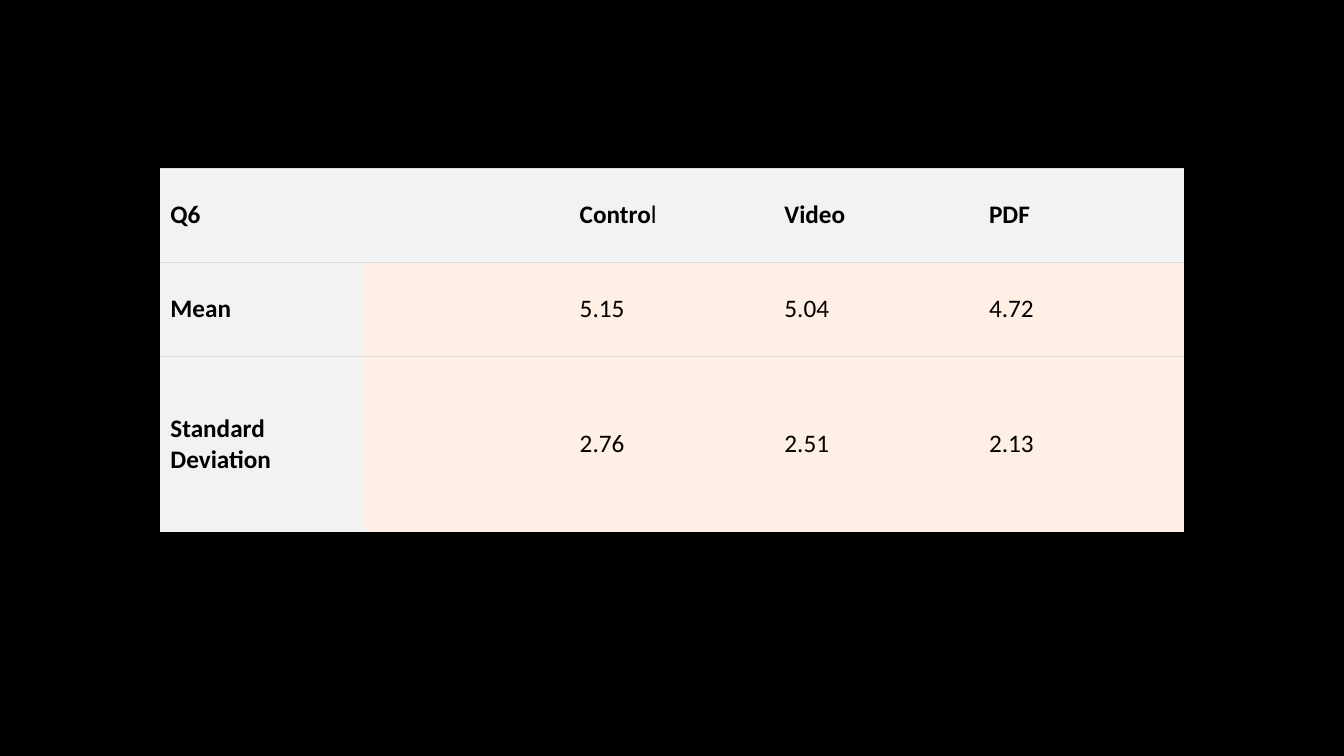
from lxml.etree import SubElement
from pptx import Presentation
from pptx.dml.color import RGBColor
from pptx.enum.text import MSO_ANCHOR
from pptx.oxml.ns import qn
from pptx.util import Inches, Pt

BLACK = RGBColor(0x00, 0x00, 0x00)
GREY = RGBColor(0xF2, 0xF2, 0xF2)
PEACH = RGBColor(0xFF, 0xEF, 0xE5)
RULE = RGBColor(0xDD, 0xDD, 0xDD)
NO_STYLE_NO_GRID = "{2D5ABB26-0587-4C30-8999-92F81FD0307C}"

ROWS = [
    ["Q6", "", "Control", "Video", "PDF"],
    ["Mean", "", "5.15", "5.04", "4.72"],
    ["Standard Deviation", "", "2.76", "2.51", "2.13"],
]
ROW_HEIGHTS = [0.93, 0.93, 1.75]
COL_WIDTH = 2.03


def add_border(cell, tag):
    ln = SubElement(cell._tc.get_or_add_tcPr(), qn(tag), w=str(Pt(0.43)))
    fill = SubElement(ln, qn("a:solidFill"))
    SubElement(fill, qn("a:srgbClr"), val=str(RULE))


prs = Presentation()
prs.slide_width, prs.slide_height = Inches(13.33), Inches(7.5)
s = prs.slides.add_slide(prs.slide_layouts[6])
s.background.fill.solid()
s.background.fill.fore_color.rgb = BLACK

n_rows, n_cols = len(ROWS), len(ROWS[0])
width = Inches(COL_WIDTH * n_cols)
left = (prs.slide_width - width) // 2
table = s.shapes.add_table(n_rows, n_cols, left, Inches(1.67),
                           width, Inches(sum(ROW_HEIGHTS))).table
table._tbl.tblPr.find(qn("a:tableStyleId")).text = NO_STYLE_NO_GRID
for col in table.columns:
    col.width = Inches(COL_WIDTH)

for i, (texts, height) in enumerate(zip(ROWS, ROW_HEIGHTS)):
    table.rows[i].height = Inches(height)
    for j, text in enumerate(texts):
        cell = table.cell(i, j)
        is_header = i == 0 or j == 0
        add_border(cell, "a:lnT")
        if i < n_rows - 1:
            add_border(cell, "a:lnB")
        cell.fill.solid()
        cell.fill.fore_color.rgb = GREY if is_header else PEACH
        cell.vertical_anchor = MSO_ANCHOR.MIDDLE
        cell.margin_left, cell.margin_right = Inches(0.1), Inches(0.06)
        cell.margin_top = cell.margin_bottom = Inches(0.04)
        p = cell.text_frame.paragraphs[0]
        p.font.name, p.font.size = "Calibri", Pt(18)
        p.font.bold = is_header
        p.font.color.rgb = BLACK
        # The last letter of "Control" is set in regular weight
        parts = ["Contro", "l"] if text == "Control" else [text] if text else []
        for part in parts:
            r = p.add_run()
            r.text = part
            r.font.name, r.font.size = "Calibri", Pt(18)
            r.font.bold = is_header and part != "l"
            r.font.color.rgb = BLACK

prs.save("out.pptx")
